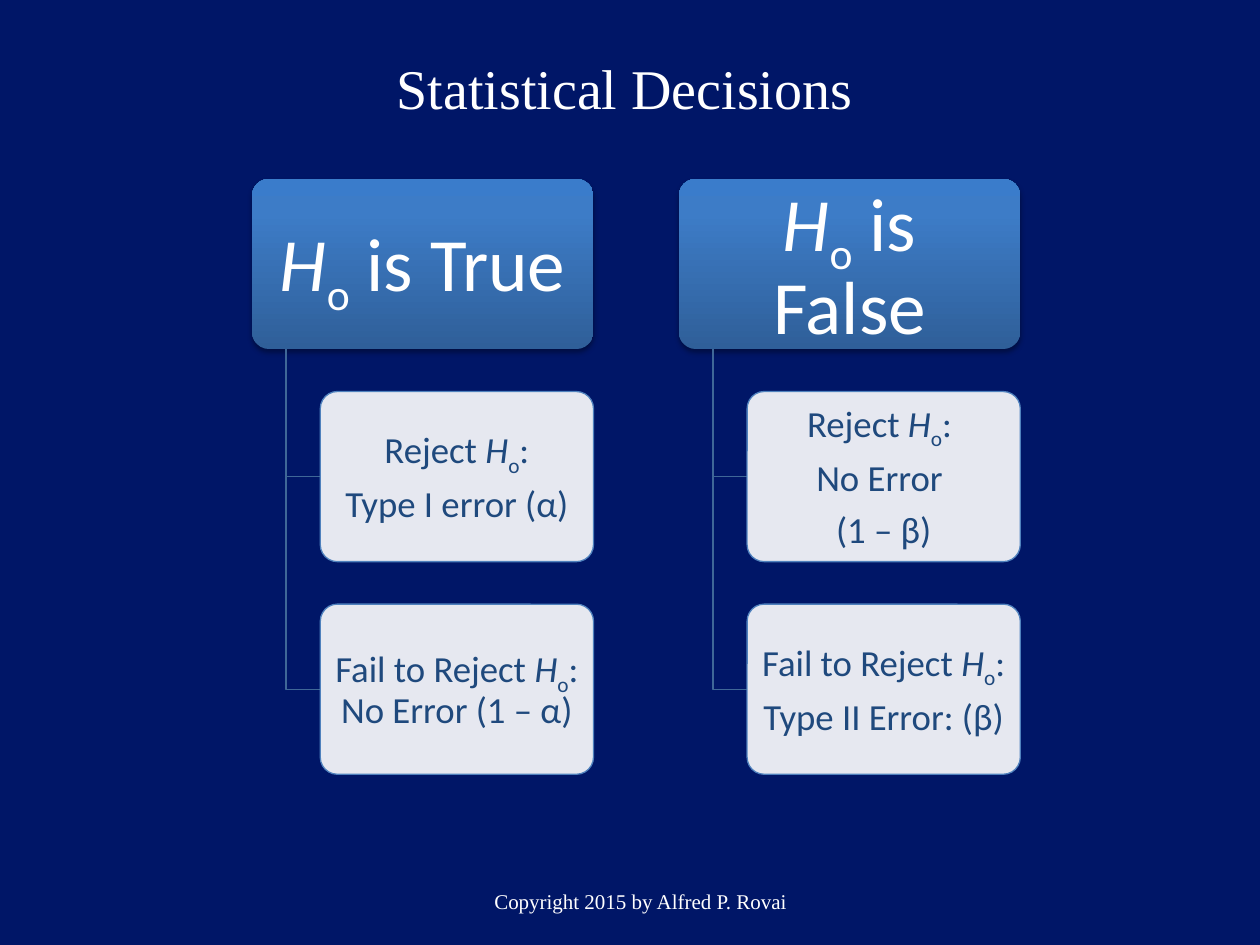
from dataclasses import dataclass
from lxml.etree import SubElement
from pptx import Presentation
from pptx.dml.color import RGBColor
from pptx.enum.shapes import MSO_SHAPE
from pptx.enum.text import MSO_ANCHOR, PP_ALIGN
from pptx.oxml.ns import qn
from pptx.util import Inches, Pt


@dataclass(frozen=True)
class Theme:
    bg: str = "001667"
    light: str = "FFFFFF"
    ink: str = "1F497D"
    border: str = "4F81BD"
    branch: str = "3F6797"
    gradient: tuple = ((0, "2F5F99"), (80, "3D7CC7"), (100, "3A7CCB"))
    serif: str = "Times New Roman"
    sans: str = "Calibri"
    title: int = 32
    header: int = 43
    body: int = 21
    footer: int = 12


T = Theme()

# Grid: each gap is a quarter of a box
LEFT, TOP = 2.0, 1.42
BOX_W, BOX_H = 2.71, 1.35
COL_STEP, ROW_STEP = BOX_W * 1.25, BOX_H * 1.25
INDENT = BOX_W * 0.2

# Text is a list of paragraphs, each a list of (text, style) runs
H0 = [("H", "italic"), ("o", "sub")]
COLUMNS = [
    ([H0 + [(" is True", "")]], [
        [[("Reject ", ""), *H0, (":", "")], [("Type I error (α)", "")]],
        [[("Fail to Reject ", ""), *H0, (": No Error (1 – α)", "")]],
    ]),
    ([H0 + [(" is False", "")]], [
        [[("Reject ", ""), *H0, (": ", "")], [("No Error ", "")], [("(1 – β)", "")]],
        [[("Fail to Reject ", ""), *H0, (": ", "")], [("Type II Error: (β)", "")]],
    ]),
]


def rgb(color):
    return RGBColor.from_string(color)


def write(tf, paragraphs, font, size, color, inset=(0.1, 0.05), spaced=False):
    tf.word_wrap = True
    tf.vertical_anchor = MSO_ANCHOR.MIDDLE
    tf.margin_left = tf.margin_right = Inches(inset[0])
    tf.margin_top = tf.margin_bottom = Inches(inset[1])
    for i, runs in enumerate(paragraphs):
        p = tf.add_paragraph() if i else tf.paragraphs[0]
        p.alignment = PP_ALIGN.CENTER
        if spaced:
            p.line_spacing = 0.9
            p.space_after = Pt(size * 0.35)
        for text, style in runs:
            r = p.add_run()
            r.text = text
            r.font.name, r.font.size = font, Pt(size)
            r.font.color.rgb = rgb(color)
            r.font.italic = style == "italic"
            if style == "sub":
                r.font._element.set("baseline", "-25000")


def add_label(s, x, y, w, h, text, size):
    sp = s.shapes.add_textbox(Inches(x), Inches(y), Inches(w), Inches(h))
    write(sp.text_frame, [[(text, "")]], T.serif, size, T.light)


def add_box(s, x, y, w):
    sp = s.shapes.add_shape(MSO_SHAPE.ROUNDED_RECTANGLE, Inches(x), Inches(y),
                            Inches(w), Inches(BOX_H))
    sp.adjustments[0] = 0.1
    sp.shadow.inherit = False
    return sp


def add_color(parent, color, alpha):
    clr = SubElement(parent, qn("a:srgbClr"), val=color)
    SubElement(clr, qn("a:alpha"), val=str(alpha * 1000))


def add_header(s, x, y, paragraphs):
    sp = add_box(s, x, y, BOX_W)
    sp.line.fill.background()
    # Gradient running upwards, with three stops
    sp.fill.gradient()
    sp.fill.gradient_angle = 90
    stops = sp._element.spPr.find(".//" + qn("a:gsLst"))
    for old in list(stops):
        stops.remove(old)
    for pos, color in T.gradient:
        add_color(SubElement(stops, qn("a:gs"), pos=str(pos * 1000)), color, 100)
    # Soft shadow below
    effects = sp._element.spPr.find(qn("a:effectLst"))
    shadow = SubElement(effects, qn("a:outerShdw"), blurRad=str(Pt(3.1)),
                        dist=str(Pt(1.8)), dir="5400000", rotWithShape="0")
    add_color(shadow, "000000", 35)
    write(sp.text_frame, paragraphs, T.sans, T.header, T.light, (0.13, 0.1), True)


def add_outcome(s, x, y, paragraphs):
    sp = add_box(s, x, y, BOX_W - INDENT)
    sp.fill.solid()
    sp.fill.fore_color.rgb = rgb(T.light)
    clr = sp._element.spPr.find(qn("a:solidFill"))[0]
    SubElement(clr, qn("a:alpha"), val="90000")
    sp.line.color.rgb = rgb(T.border)
    sp.line.width = Pt(0.75)
    write(sp.text_frame, paragraphs, T.sans, T.body, T.ink, (0.08, 0.07), True)


def add_branch(s, x, y, x_end, y_end):
    fb = s.shapes.build_freeform(Inches(x), Inches(y))
    fb.add_line_segments([(Inches(x), Inches(y_end)),
                          (Inches(x_end), Inches(y_end))], close=False)
    sp = fb.convert_to_shape()
    sp.shadow.inherit = False
    sp.fill.background()
    sp.line.color.rgb = rgb(T.branch)
    sp.line.width = Pt(0.75)


def main():
    prs = Presentation()
    prs.slide_width, prs.slide_height = Inches(10), Inches(7.5)
    s = prs.slides.add_slide(prs.slide_layouts[6])
    s.background.fill.solid()
    s.background.fill.fore_color.rgb = rgb(T.bg)

    # Title and footer
    add_label(s, 0.42, 0.3, 9.08, 0.78, "Statistical Decisions", T.title)
    add_label(s, 1.75, 6.95, 6.67, 0.4, "Copyright 2015 by Alfred P. Rovai", T.footer)

    # One tree per hypothesis state
    for col, (header, outcomes) in enumerate(COLUMNS):
        x = LEFT + col * COL_STEP
        add_header(s, x, TOP, header)
        for row, outcome in enumerate(outcomes, 1):
            y = TOP + row * ROW_STEP
            add_branch(s, x + INDENT / 2, TOP + BOX_H, x + INDENT, y + BOX_H / 2)
            add_outcome(s, x + INDENT, y, outcome)

    prs.save("out.pptx")


if __name__ == "__main__":
    main()
